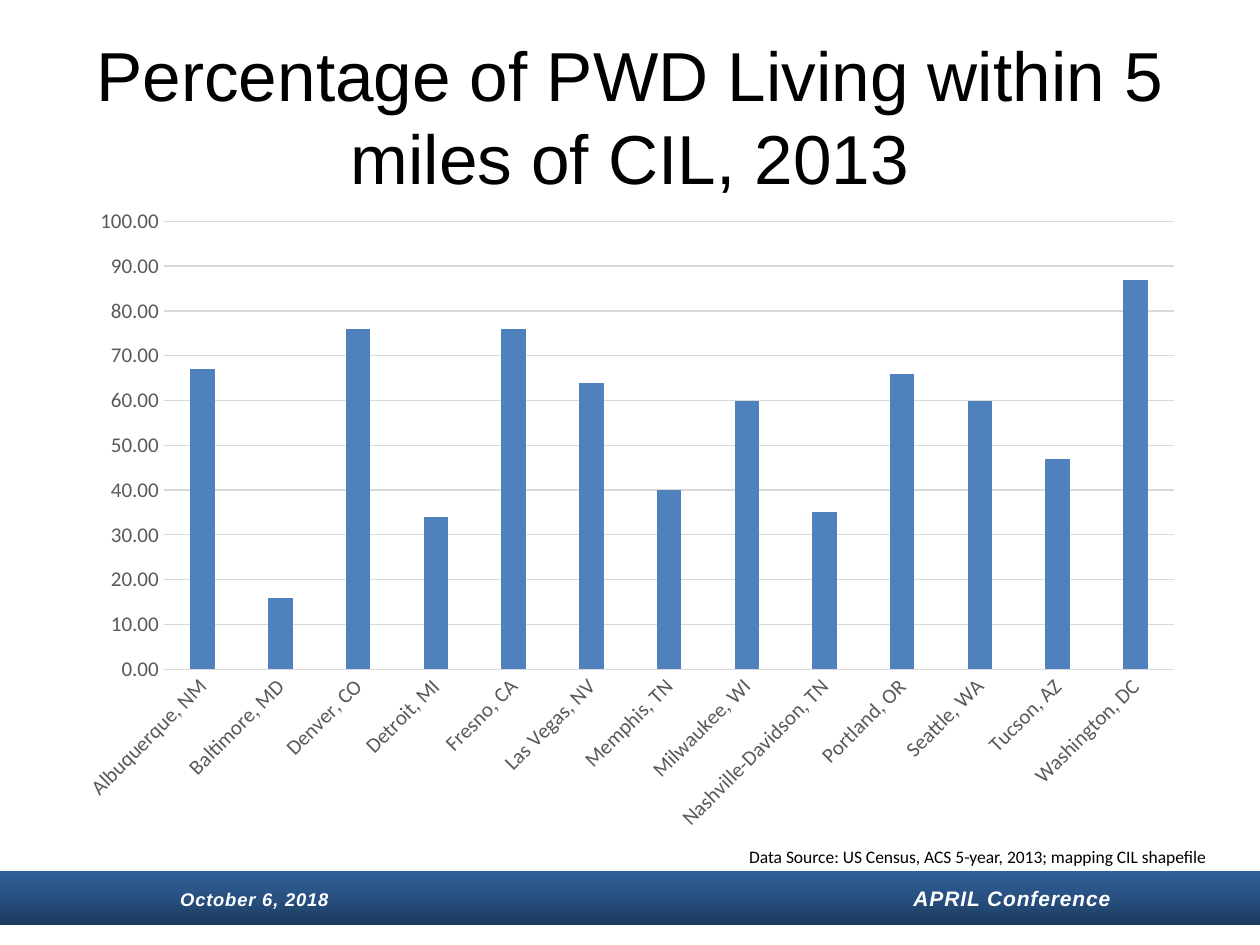
from copy import deepcopy
from lxml.etree import SubElement
from pptx import Presentation
from pptx.chart.data import CategoryChartData
from pptx.dml.color import RGBColor
from pptx.enum.chart import XL_CHART_TYPE, XL_TICK_MARK
from pptx.enum.shapes import MSO_SHAPE
from pptx.enum.text import MSO_ANCHOR, MSO_AUTO_SIZE, PP_ALIGN
from pptx.oxml.ns import qn
from pptx.util import Pt

BLACK = RGBColor(0, 0, 0)
WHITE = RGBColor(255, 255, 255)
GRAY = RGBColor(0x59, 0x59, 0x59)
GRID = RGBColor(0xD9, 0xD9, 0xD9)
BLUE = RGBColor(0x4F, 0x81, 0xBD)
NAVY = RGBColor(0x1C, 0x39, 0x5B)
MID = RGBColor(0x28, 0x51, 0x81)
LIGHT = RGBColor(0x30, 0x60, 0x99)


def write(para, text, size, font="Arial", color=BLACK, bold=False,
          slant=False, space=0, align=PP_ALIGN.LEFT):
    para.alignment = align
    run = para.add_run()
    run.text = text
    face = run.font
    face.size, face.name = Pt(size), font
    face.bold, face.italic = bold, slant
    face.color.rgb = color
    if space:
        run._r.get_or_add_rPr().set("spc", str(int(space * 100)))


deck = Presentation()
deck.slide_width, deck.slide_height = Pt(720), Pt(540)
slide = deck.slides.add_slide(deck.slide_layouts[5])

# Footer band with a three-stop gradient, dark at the bottom
band = slide.shapes.add_shape(MSO_SHAPE.RECTANGLE, Pt(0), Pt(497.5), Pt(720), Pt(31))
band.shadow.inherit = False
band.line.fill.background()
band.fill.gradient()
band.fill.gradient_angle = 90
first = band.fill._fill._gradFill.find(qn("a:gsLst"))[0]
first.addnext(deepcopy(first))
for stop, color, place in zip(band.fill.gradient_stops, (NAVY, MID, LIGHT), (0, 0.5, 1)):
    stop.color.rgb = color
    stop.position = place

# Footer text, set on two tab stops
frame = band.text_frame
frame.margin_left = frame.margin_right = 0
frame.vertical_anchor = MSO_ANCHOR.MIDDLE
para = frame.paragraphs[0]
for text, size in (("\tOctober 6, 2018", 10.5), ("\tAPRIL Conference", 12)):
    write(para, text, size, color=WHITE, bold=True, slant=True, space=0.5)
tabs = SubElement(para._p.get_or_add_pPr(), qn("a:tabLst"))
for left in (103, 522):
    SubElement(tabs, qn("a:tab"), pos=str(Pt(left)), algn="l")

# Title
title = slide.shapes.title
title.left, title.top, title.width, title.height = Pt(36), Pt(30), Pt(648), Pt(71.5)
frame = title.text_frame
frame.word_wrap = True
frame.auto_size = MSO_AUTO_SIZE.NONE
frame.vertical_anchor = MSO_ANCHOR.MIDDLE
write(frame.paragraphs[0], "Percentage of PWD Living within 5 miles of CIL, 2013",
      39.6, align=PP_ALIGN.CENTER)

# Column chart
rates = {
    "Albuquerque, NM": 67, "Baltimore, MD": 16, "Denver, CO": 76,
    "Detroit, MI": 34, "Fresno, CA": 76, "Las Vegas, NV": 64,
    "Memphis, TN": 40, "Milwaukee, WI": 60, "Nashville-Davidson, TN": 35,
    "Portland, OR": 66, "Seattle, WA": 60, "Tucson, AZ": 47,
    "Washington, DC": 87,
}
data = CategoryChartData(number_format="0.00")
data.categories = list(rates)
data.add_series("Series 1", list(rates.values()))
chart = slide.shapes.add_chart(XL_CHART_TYPE.COLUMN_CLUSTERED, Pt(36), Pt(112),
                               Pt(648), Pt(370), data).chart
chart.has_legend = chart.has_title = False
chart.font.size, chart.font.name = Pt(10), "Calibri"
plot = chart.plots[0]
plot.gap_width, plot.overlap = 219, -27
plot.vary_by_categories = False
fill = plot.series[0].format.fill
fill.solid()
fill.fore_color.rgb = BLUE

# Axes and gridlines
cats, vals = chart.category_axis, chart.value_axis
for axis in (cats, vals):
    axis.major_tick_mark = axis.minor_tick_mark = XL_TICK_MARK.NONE
    face = axis.tick_labels.font
    face.size, face.name = Pt(12), "Calibri"
    face.color.rgb = GRAY
cats.tick_labels.font._element.getparent().getparent().getparent().find(
    qn("a:bodyPr")).set("rot", "-2700000")
vals.minimum_scale, vals.maximum_scale, vals.major_unit = 0, 100, 10
vals.tick_labels.number_format = "0.00"
vals.tick_labels.number_format_is_linked = False
vals.format.line.fill.background()
vals.has_major_gridlines = True
for line in (cats.format.line, vals.major_gridlines.format.line):
    line.color.rgb = GRID
    line.width = Pt(0.75)

# Data source
note = slide.shapes.add_textbox(Pt(102), Pt(480), Pt(594), Pt(19.5))
frame = note.text_frame
frame.word_wrap = True
frame.auto_size = MSO_AUTO_SIZE.SHAPE_TO_FIT_TEXT
write(frame.paragraphs[0],
      "Data Source: US Census, ACS 5-year, 2013; mapping CIL shapefile", 10,
      font="Calibri", align=PP_ALIGN.RIGHT)

deck.save("out.pptx")
